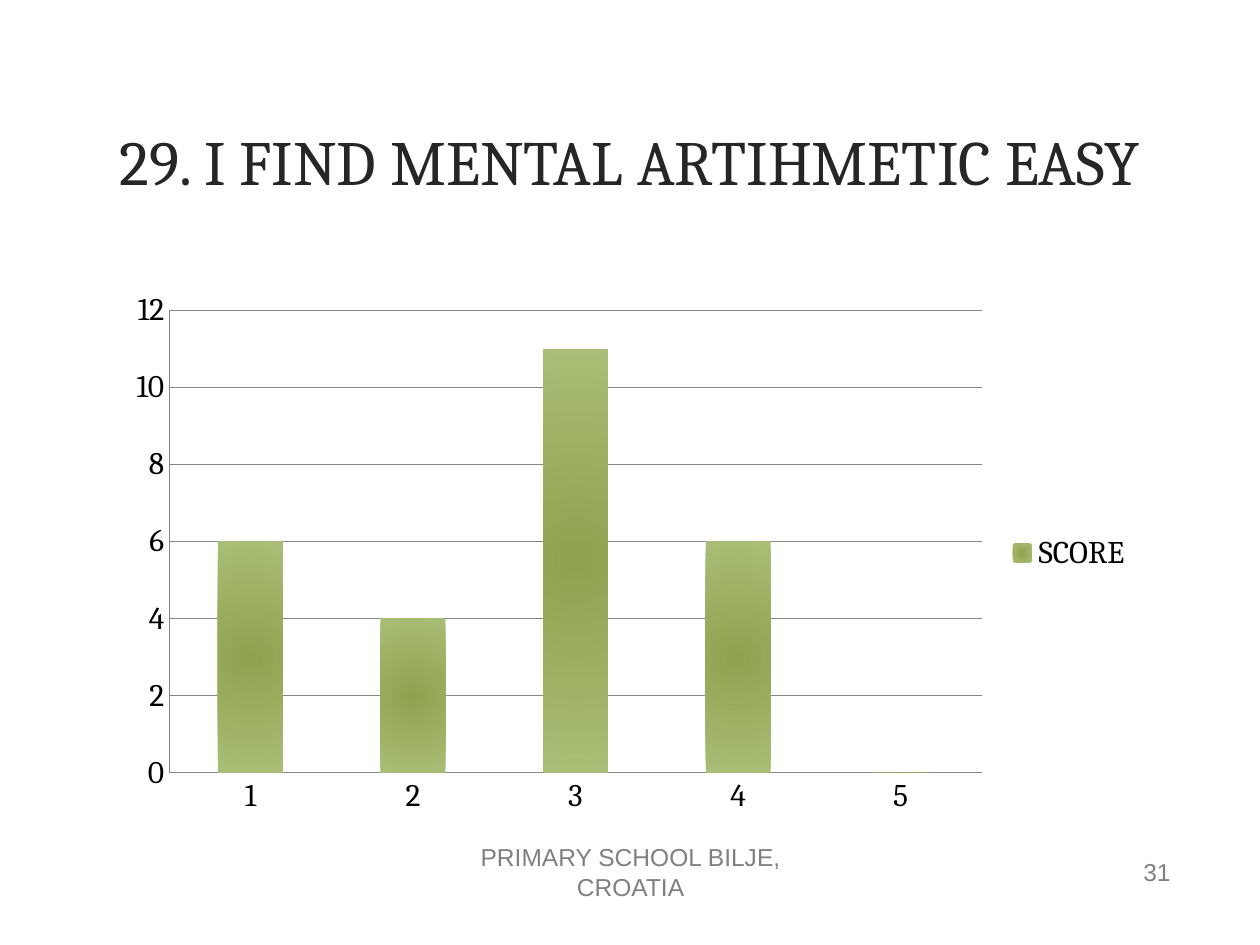
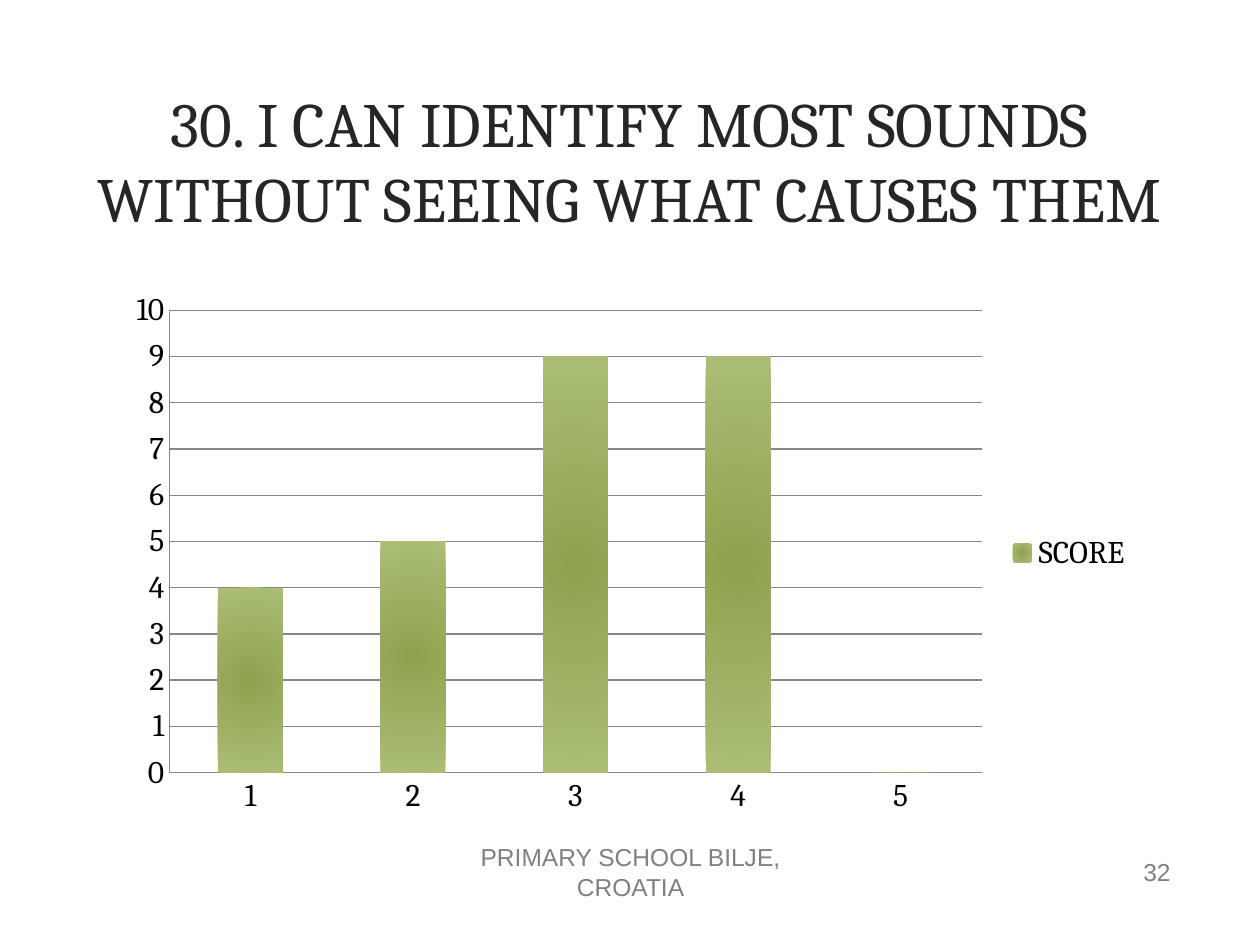
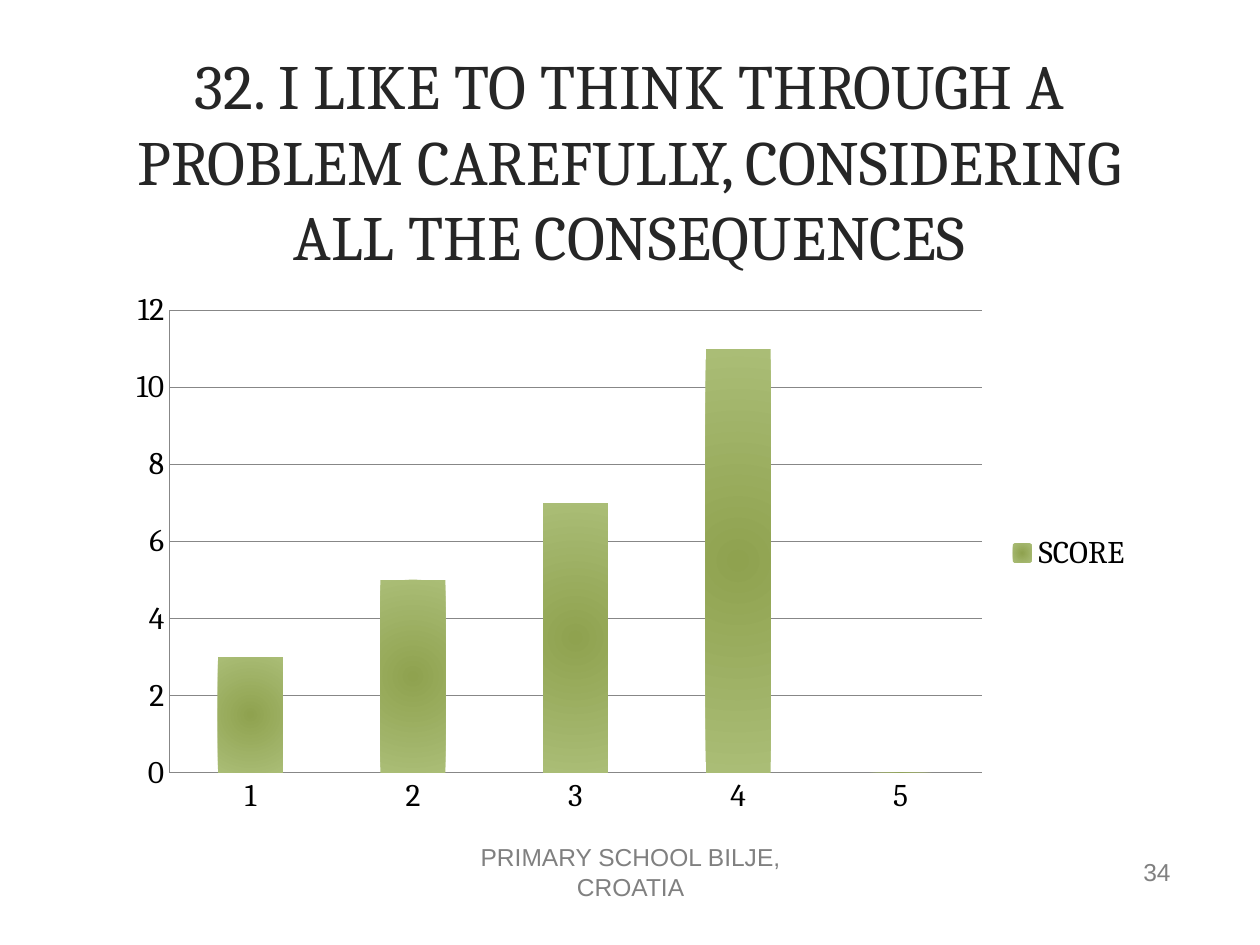
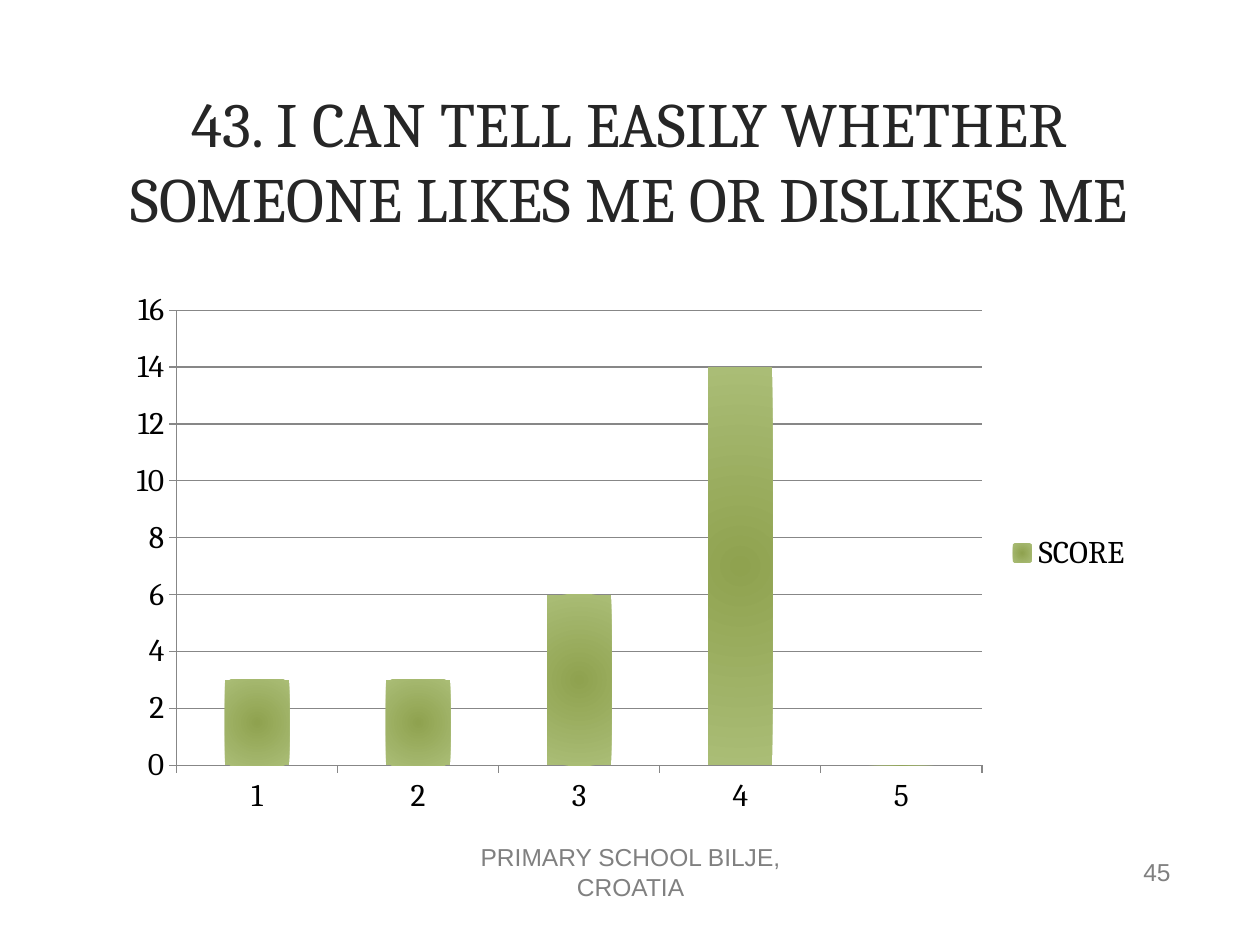
"""Build four survey result slides, each with a title, a column chart and a footer."""
import lxml.etree
import pptx
import pptx.chart.data
import pptx.dml.color
import pptx.enum.chart
import pptx.enum.text
import pptx.oxml.ns
import pptx.util

Inches = pptx.util.Inches
Pt = pptx.util.Pt
RGBColor = pptx.dml.color.RGBColor
ALIGN = pptx.enum.text.PP_ALIGN
TICK = pptx.enum.chart.XL_TICK_MARK
qn = pptx.oxml.ns.qn

QUESTIONS = [
    {"number": 29, "text": "I FIND MENTAL ARTIHMETIC EASY",
     "scores": (6, 4, 11, 6, 0), "maximum": 12, "step": 2, "tick": TICK.NONE},
    {"number": 30, "text": "I CAN IDENTIFY MOST SOUNDS WITHOUT SEEING WHAT CAUSES THEM",
     "scores": (4, 5, 9, 9, 0), "maximum": 10, "step": 1, "tick": TICK.NONE},
    {"number": 32, "text": "I LIKE TO THINK THROUGH A PROBLEM CAREFULLY, CONSIDERING ALL THE CONSEQUENCES",
     "scores": (3, 5, 7, 11, 0), "maximum": 12, "step": 2, "tick": TICK.NONE},
    {"number": 43, "text": "I CAN TELL EASILY WHETHER SOMEONE LIKES ME OR DISLIKES ME",
     "scores": (3, 3, 6, 14, 0), "maximum": 16, "step": 2, "tick": TICK.OUTSIDE},
]
ANSWERS = ("1", "2", "3", "4", "5")
SERIES_NAME = "SCORE"
FOOTER = "PRIMARY SCHOOL BILJE, CROATIA"
PAGE_OFFSET = 2

TITLE_BOX = (0.6, 0.48, 8.79, 1.58)
CHART_BOX = (0.92, 2.23, 8.17, 4.32)
FOOTER_BOX = (3.42, 6.72, 3.17, 0.4)
NUMBER_BOX = (7.06, 6.72, 2.33, 0.4)

TITLE_COLOR = RGBColor(0x26, 0x26, 0x26)
FOOTER_COLOR = RGBColor(0x80, 0x80, 0x80)
CHART_TEXT = RGBColor(0, 0, 0)
AXIS_COLOR = RGBColor(0x87, 0x87, 0x87)
BAR_CENTER = RGBColor(0x8F, 0xA2, 0x4F)
BAR_EDGE = RGBColor(0xAA, 0xBD, 0x76)


def style_font(font, name, size, color):
    font.name = name
    font.size = Pt(size)
    font.color.rgb = color


def write_text(shape, text, alignment, name, size, color):
    frame = shape.text_frame
    frame.text = text
    frame.word_wrap = True
    frame.auto_size = pptx.enum.text.MSO_AUTO_SIZE.NONE
    frame.vertical_anchor = pptx.enum.text.MSO_ANCHOR.MIDDLE
    paragraph = frame.paragraphs[0]
    paragraph.alignment = alignment
    style_font(paragraph.runs[0].font, name, size, color)


def add_title(slide, text):
    title = slide.shapes.title
    title.left, title.top, title.width, title.height = map(Inches, TITLE_BOX)
    write_text(title, text, ALIGN.CENTER, "Cambria", 36, TITLE_COLOR)


def add_footer_text(slide, box, text, alignment):
    shape = slide.shapes.add_textbox(*map(Inches, box))
    write_text(shape, text, alignment, "Arial", 14, FOOTER_COLOR)


def fill_radially(series):
    fill = series.format.fill
    fill.gradient()
    for stop, color in zip(fill.gradient_stops, (BAR_CENTER, BAR_EDGE)):
        stop.color.rgb = color
    linear = next(series._element.iter(qn("a:lin")))
    circle = lxml.etree.Element(qn("a:path"), {"path": "circle"})
    center = {side: "50000" for side in "ltrb"}
    lxml.etree.SubElement(circle, qn("a:fillToRect"), center)
    linear.getparent().replace(linear, circle)


def add_score_chart(slide, question):
    data = pptx.chart.data.CategoryChartData()
    data.categories = ANSWERS
    data.add_series(SERIES_NAME, question["scores"])
    chart = slide.shapes.add_chart(
        pptx.enum.chart.XL_CHART_TYPE.COLUMN_CLUSTERED, *map(Inches, CHART_BOX), data).chart
    style_font(chart.font, "Cambria", 18, CHART_TEXT)
    chart.has_title = False
    chart.has_legend = True
    chart.legend.position = pptx.enum.chart.XL_LEGEND_POSITION.RIGHT
    chart.legend.include_in_layout = False
    plot = chart.plots[0]
    plot.gap_width = 150
    plot.vary_by_categories = False
    fill_radially(plot.series[0])
    scale = chart.value_axis
    scale.minimum_scale = 0
    scale.maximum_scale = question["maximum"]
    scale.major_unit = question["step"]
    scale.has_major_gridlines = True
    for axis in (chart.category_axis, scale):
        axis.major_tick_mark = question["tick"]
        axis.minor_tick_mark = TICK.NONE
    for line in (chart.category_axis.format.line, scale.format.line,
                 scale.major_gridlines.format.line):
        line.color.rgb = AXIS_COLOR
        line.width = Pt(0.75)


def main():
    presentation = pptx.Presentation()
    presentation.slide_width = Inches(10)
    presentation.slide_height = Inches(7.5)
    title_only = presentation.slide_layouts[5]
    for question in QUESTIONS:
        number = question["number"]
        slide = presentation.slides.add_slide(title_only)
        add_title(slide, f"{number}. {question['text']}")
        add_score_chart(slide, question)
        add_footer_text(slide, FOOTER_BOX, FOOTER, ALIGN.CENTER)
        add_footer_text(slide, NUMBER_BOX, str(number + PAGE_OFFSET), ALIGN.RIGHT)
    presentation.save("out.pptx")


if __name__ == "__main__":
    main()
